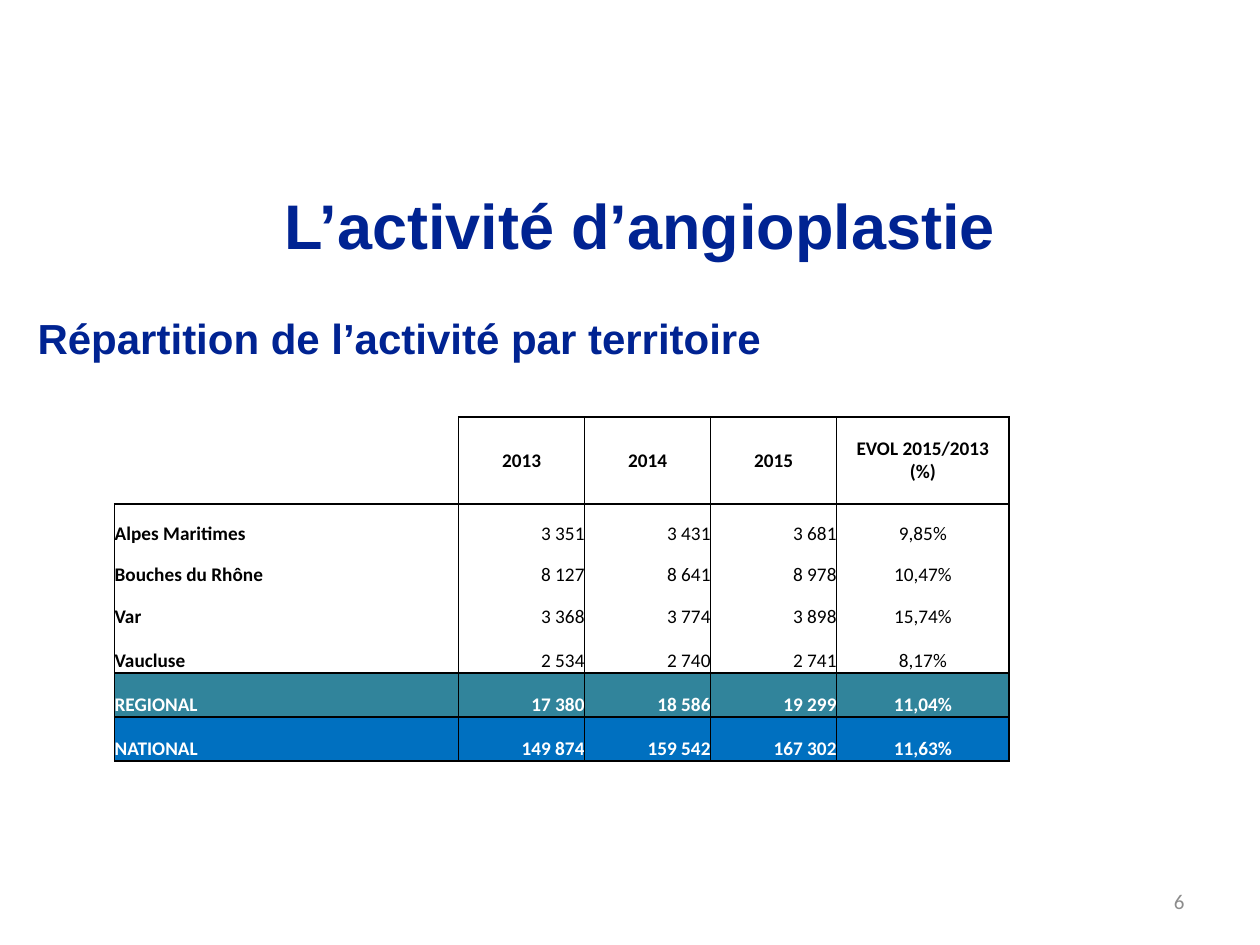
from dataclasses import dataclass
from typing import Any

import pptx
import pptx.dml.color
import pptx.enum.text
import pptx.oxml
import pptx.oxml.ns
import pptx.util

Inches = pptx.util.Inches
Align = pptx.enum.text.PP_ALIGN
Anchor = pptx.enum.text.MSO_ANCHOR

COLORS = {
    "navy": "002392",
    "black": "000000",
    "white": "FFFFFF",
    "gray": "8C8C8C",
    "teal": "31849B",
    "blue": "0070C0",
}


@dataclass
class Label:
    text: str
    left: float
    top: float
    width: float
    height: float
    font: dict[str, Any]
    color: str
    align: Any
    anchor: Any
    margin_top: float = 0.05


@dataclass
class Row:
    height: float
    texts: tuple[str, ...] = ("",) * 6
    fill: str | None = None
    color: str = "black"
    bold: bool = False
    header: bool = False


LABELS = [
    Label("L’activité d’angioplastie", 1.93, 1.31, 6.3, 0.94,
          {"name": "Arial", "size": pptx.util.Pt(36), "bold": True},
          "navy", Align.CENTER, Anchor.MIDDLE),
    Label("Répartition de l’activité par territoire", 0.2, 1.94, 9.53, 3.23,
          {"name": "Arial", "size": pptx.util.Pt(24), "bold": True},
          "navy", Align.LEFT, Anchor.TOP, 0.54),
    Label("6", 7.17, 6.95, 2.33, 0.4,
          {"name": "Calibri", "size": pptx.util.Pt(12), "bold": False},
          "gray", Align.RIGHT, Anchor.MIDDLE),
]

ROWS = [
    Row(0.35),
    Row(0.69, ("", "2013", "2014", "2015", "EVOL 2015/2013\v(%)", ""), bold=True, header=True),
    Row(0.33, ("Alpes Maritimes", "3 351", "3 431", "3 681", "9,85%", "")),
    Row(0.33, ("Bouches du Rhône", "8 127", "8 641", "8 978", "10,47%", "")),
    Row(0.33, ("Var", "3 368", "3 774", "3 898", "15,74%", "")),
    Row(0.35, ("Vaucluse", "2 534", "2 740", "2 741", "8,17%", "")),
    Row(0.35, ("REGIONAL", "17 380", "18 586", "19 299", "11,04%", ""), "teal", "white", True),
    Row(0.35, ("NATIONAL", "149 874", "159 542", "167 302", "11,63%", ""), "blue", "white", True),
    Row(0.33),
]
COLUMN_WIDTHS = [2.73, 1, 1, 1, 1.37, 1]
COLUMN_ALIGNS = [Align.LEFT, Align.RIGHT, Align.RIGHT, Align.RIGHT, Align.CENTER, Align.CENTER]
VERTICAL_WIDTHS = [1, 1, 0.5, 0.5, 0.5, 1]
RULED_EDGES = (2, 6, 7, 8)


def set_values(target: Any, values: dict[str, Any]) -> None:
    for name, value in values.items():
        setattr(target, name, value)


def rgb(color: str) -> Any:
    return pptx.dml.color.RGBColor.from_string(COLORS[color])


def write_text(para: Any, text: str, font: dict[str, Any], color: str, align: Any) -> None:
    para.text = text
    para.alignment = align
    for span in para.runs:
        set_values(span.font, font)
        span.font.color.rgb = rgb(color)


def draw_label(page: Any, label: Label) -> None:
    box = page.shapes.add_textbox(
        Inches(label.left), Inches(label.top), Inches(label.width), Inches(label.height))
    set_values(box.text_frame, {
        "word_wrap": True,
        "vertical_anchor": label.anchor,
        "margin_top": Inches(label.margin_top),
    })
    write_text(box.text_frame.paragraphs[0], label.text, label.font, label.color, label.align)


def vertical_width(edge: int, row: int) -> float:
    first_row = 2 if edge == 0 else 1
    ruled = edge < len(VERTICAL_WIDTHS) and first_row <= row <= 7
    return VERTICAL_WIDTHS[edge] if ruled else 0


def horizontal_width(edge: int, column: int) -> float:
    ruled = column < 5 and edge in RULED_EDGES
    header_top = edge == 1 and 1 <= column <= 4
    return 1 if ruled or header_top else 0


def set_borders(cell: Any, row: int, column: int) -> None:
    widths = {
        "lnL": vertical_width(column, row),
        "lnR": vertical_width(column + 1, row),
        "lnT": horizontal_width(row, column),
        "lnB": horizontal_width(row + 1, column),
    }
    properties = cell._tc.get_or_add_tcPr()
    for position, (tag, width) in enumerate(widths.items()):
        paint = "<a:noFill/>"
        if width:
            paint = f'<a:solidFill><a:srgbClr val="{COLORS["black"]}"/></a:solidFill>'
        line = pptx.oxml.parse_xml(
            f'<a:{tag} {pptx.oxml.ns.nsdecls("a")} w="{pptx.util.Pt(width)}">{paint}</a:{tag}>')
        properties.insert(position, line)


def draw_cell(cell: Any, row: Row, row_index: int, column: int) -> None:
    set_values(cell, {
        "margin_left": 0,
        "margin_right": 0,
        "margin_top": 0,
        "margin_bottom": 0,
        "vertical_anchor": Anchor.MIDDLE if row.header else Anchor.BOTTOM,
    })
    if row.fill:
        if column < 5:
            cell.fill.solid()
            cell.fill.fore_color.rgb = rgb(row.fill)
        else:
            cell.fill.background()
    else:
        cell.fill.background()
    font = {"name": "Calibri", "size": pptx.util.Pt(11), "bold": row.bold or column == 0}
    align = Align.CENTER if row.header else COLUMN_ALIGNS[column]
    write_text(cell.text_frame.paragraphs[0], row.texts[column], font, row.color, align)
    set_borders(cell, row_index, column)


def draw_table(page: Any) -> None:
    frame = page.shapes.add_table(
        len(ROWS), len(COLUMN_WIDTHS), Inches(0.91), Inches(2.96),
        Inches(sum(COLUMN_WIDTHS)), Inches(sum(row.height for row in ROWS)))
    table = frame.table
    set_values(table, {"first_row": False, "horz_banding": False})
    for column, width in zip(table.columns, COLUMN_WIDTHS):
        column.width = Inches(width)
    for row_index, row in enumerate(ROWS):
        table.rows[row_index].height = Inches(row.height)
        for column in range(len(COLUMN_WIDTHS)):
            draw_cell(table.cell(row_index, column), row, row_index, column)


def main() -> None:
    deck = pptx.Presentation()
    set_values(deck, {"slide_width": Inches(10), "slide_height": Inches(7.5)})
    page = deck.slides.add_slide(deck.slide_layouts[6])
    for label in LABELS:
        draw_label(page, label)
    draw_table(page)
    deck.save("out.pptx")


if __name__ == "__main__":
    main()
